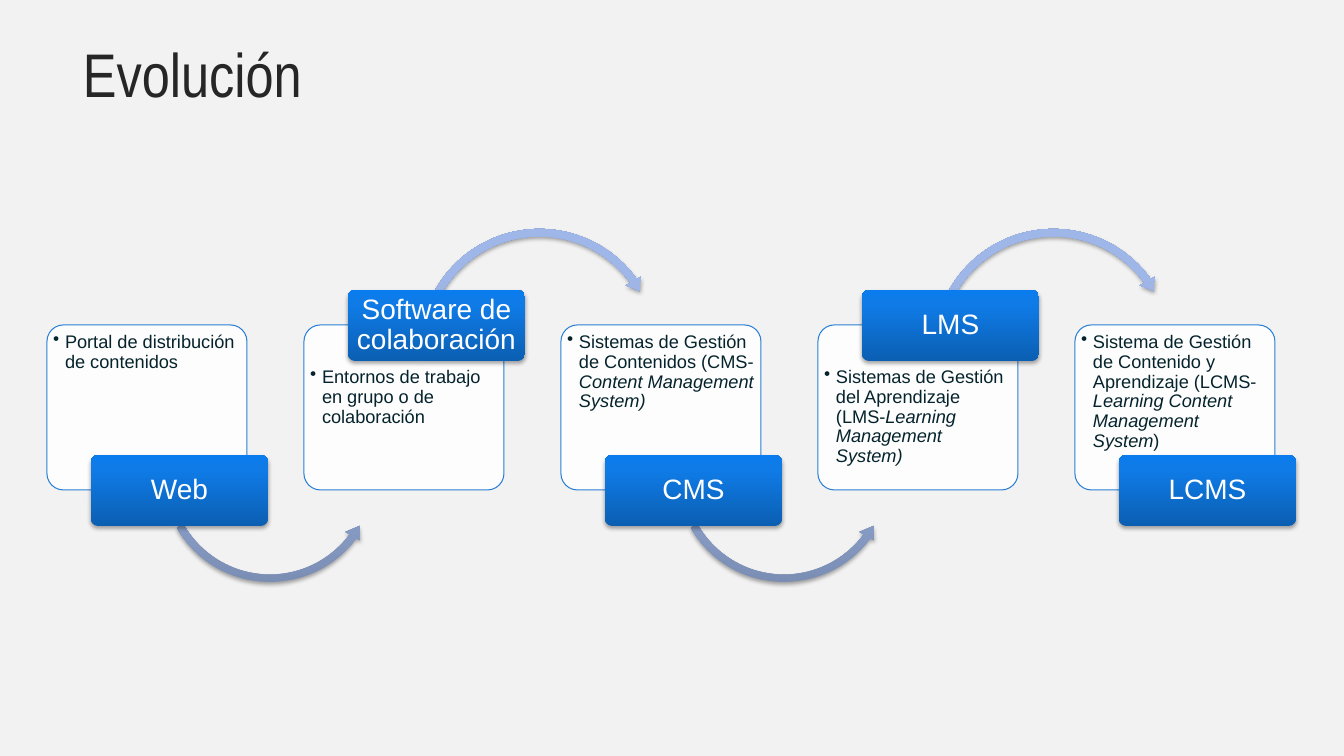
import copy
from dataclasses import dataclass

import lxml.etree
import pptx
import pptx.dml.color
import pptx.enum.shapes
import pptx.enum.text
import pptx.oxml.ns
import pptx.util
from pptx.shapes.autoshape import Shape
from pptx.slide import Slide
from pptx.text.text import _Paragraph

EMU_PER_PX = 914400 / 100.8

PITCH = 257
CARD_LEFT, CARD_TOP, CARD_WIDTH, CARD_HEIGHT = 47, 325, 200, 165
TAG_WIDTH, TAG_HEIGHT = 177, 71
TAG_SHIFT = 44
ARROW_SHIFT = 111

TAG_GRADIENT = ((0, "0B5FB2"), (0.8, "0F7BE7"), (1, "0B7CED"))
ARROW_GRADIENT = ((0, "7A8DB3"), (0.8, "9FB7E8"), (1, "9EB8EB"))

SHAPES = pptx.enum.shapes.MSO_SHAPE
ANCHOR = pptx.enum.text.MSO_ANCHOR
ALIGN = pptx.enum.text.PP_ALIGN


@dataclass(frozen=True)
class Piece:
    text: str
    italic: bool = False


@dataclass(frozen=True)
class Stage:
    tag: str
    pieces: tuple[Piece, ...]


@dataclass(frozen=True)
class Side:
    """Geometry of a stage whose tag sits at the bottom or top of its card."""
    tag_top: int
    text_top: int
    arrow_kind: SHAPES
    arrow_top: int
    arrow_size: int
    arrow_adjustments: tuple[float, ...]


BOTTOM = Side(455, 330, SHAPES.LEFT_CIRCULAR_ARROW, 363, 224,
              (0.033, 4.084, 21.839, 90.245, 0.039))
TOP = Side(290, 365, SHAPES.CIRCULAR_ARROW, 224, 249,
           (0.03, 3.636, 194.608, 125.755, 0.035))

STAGES = (
    Stage("Web", (Piece("Portal de distribución de contenidos"),)),
    Stage("Software de colaboración",
          (Piece("Entornos de trabajo en grupo o de colaboración"),)),
    Stage("CMS", (Piece("Sistemas de Gestión de Contenidos (CMS-"),
                  Piece("Content Management System)", True))),
    Stage("LMS", (Piece("Sistemas de Gestión del Aprendizaje (LMS-"),
                  Piece("Learning Management System)", True))),
    Stage("LCMS", (Piece("Sistema de Gestión de Contenido y Aprendizaje (LCMS-"),
                   Piece("Learning Content Management System", True),
                   Piece(")"))),
)


def px(length: int) -> pptx.util.Emu:
    return pptx.util.Emu(round(length * EMU_PER_PX))


def color(value: str) -> pptx.dml.color.RGBColor:
    return pptx.dml.color.RGBColor.from_string(value)


def add_child(parent: lxml.etree._Element, tag: str, **attributes: str) -> lxml.etree._Element:
    return lxml.etree.SubElement(parent, pptx.oxml.ns.qn(tag), attributes)


def add_shape(slide: Slide, kind: SHAPES, left: int, top: int, width: int, height: int,
              adjustments: tuple[float, ...]) -> Shape:
    shape = slide.shapes.add_shape(kind, px(left), px(top), px(width), px(height))
    shape.shadow.inherit = False
    for index, value in enumerate(adjustments):
        shape.adjustments[index] = value
    return shape


def make_glossy(shape: Shape, gradient: tuple[tuple[float, str], ...]) -> None:
    """Give a borderless shape a bottom-to-top gradient and a soft shadow."""
    shape.line.fill.background()
    shape.fill.gradient()
    shape.fill.gradient_angle = 90
    properties = shape._element.spPr
    stop_list = properties.find(".//" + pptx.oxml.ns.qn("a:gsLst"))
    stop_list.append(copy.deepcopy(stop_list[0]))
    for stop, (position, value) in zip(shape.fill.gradient_stops, gradient):
        stop.position = position
        stop.color.rgb = color(value)
    effects = properties.find(pptx.oxml.ns.qn("a:effectLst"))
    shadow = add_child(effects, "a:outerShdw", blurRad=str(pptx.util.Pt(3.1)),
                       dist=str(pptx.util.Pt(1.8)), dir="5400000", rotWithShape="0")
    black = add_child(shadow, "a:srgbClr", val="000000")
    add_child(black, "a:alpha", val="35000")


def add_text(slide: Slide, left: int, top: int, width: int, height: int,
             insets: tuple[int, int], anchor: ANCHOR) -> _Paragraph:
    """Add a text box and return its paragraph; insets are side, then top and bottom."""
    box = slide.shapes.add_textbox(px(left), px(top), px(width), px(height))
    frame = box.text_frame
    frame.word_wrap = True
    frame.vertical_anchor = anchor
    frame.margin_left = frame.margin_right = px(insets[0])
    frame.margin_top = frame.margin_bottom = px(insets[1])
    return frame.paragraphs[0]


def add_run(para: _Paragraph, piece: Piece, size: int, value: str, font: str = "Arial") -> None:
    span = para.add_run()
    span.text = piece.text
    span.font.name = font
    span.font.size = pptx.util.Pt(size)
    span.font.italic = piece.italic
    span.font.color.rgb = color(value)


def add_card(slide: Slide, stage: Stage, left: int, text_top: int) -> None:
    card = add_shape(slide, SHAPES.ROUNDED_RECTANGLE, left, CARD_TOP,
                     CARD_WIDTH, CARD_HEIGHT, (0.1,))
    card.fill.solid()
    card.fill.fore_color.rgb = color("FFFFFF")
    white = card._element.spPr.find(".//" + pptx.oxml.ns.qn("a:srgbClr"))
    add_child(white, "a:alpha", val="90000")
    card.line.color.rgb = color("297FD5")
    card.line.width = pptx.util.Pt(0.75)

    para = add_text(slide, left + 3, text_top, 193, 122, (3, 3), ANCHOR.TOP)
    para.level = 1
    para.line_spacing = 0.9
    properties = para._p.get_or_add_pPr()
    properties.set("marL", str(px(12)))
    properties.set("indent", str(px(-12)))
    add_child(properties, "a:buChar", char="•")
    for piece in stage.pieces:
        add_run(para, piece, 13, "05232C")


def add_arrow(slide: Slide, left: int, side: Side) -> None:
    arrow = add_shape(slide, side.arrow_kind, left, side.arrow_top,
                      side.arrow_size, side.arrow_size, side.arrow_adjustments)
    make_glossy(arrow, ARROW_GRADIENT)


def add_tag(slide: Slide, text: str, left: int, top: int) -> None:
    tag = add_shape(slide, SHAPES.ROUNDED_RECTANGLE, left, top, TAG_WIDTH, TAG_HEIGHT, (0.1,))
    make_glossy(tag, TAG_GRADIENT)
    para = add_text(slide, left + 2, top + 2, TAG_WIDTH - 4, TAG_HEIGHT - 4,
                    (4, 3), ANCHOR.MIDDLE)
    para.alignment = ALIGN.CENTER
    para.line_spacing = 0.9
    add_run(para, Piece(text), 20, "FFFFFF")


def main() -> None:
    deck = pptx.Presentation()
    deck.slide_width, deck.slide_height = px(1344), px(756)
    page = deck.slides.add_slide(deck.slide_layouts[6])
    page.background.fill.solid()
    page.background.fill.fore_color.rgb = color("F2F2F2")

    title = add_text(page, 73, 25, 1120, 95, (10, 5), ANCHOR.MIDDLE)
    add_run(title, Piece("Evolución"), 44, "262626", "Arial Narrow")

    for index, stage in enumerate(STAGES):
        left = CARD_LEFT + index * PITCH
        side = TOP if index % 2 else BOTTOM
        add_card(page, stage, left, side.text_top)
        if index < len(STAGES) - 1:
            add_arrow(page, left + ARROW_SHIFT, side)
        add_tag(page, stage.tag, left + TAG_SHIFT, side.tag_top)

    deck.save("out.pptx")


if __name__ == "__main__":
    main()
